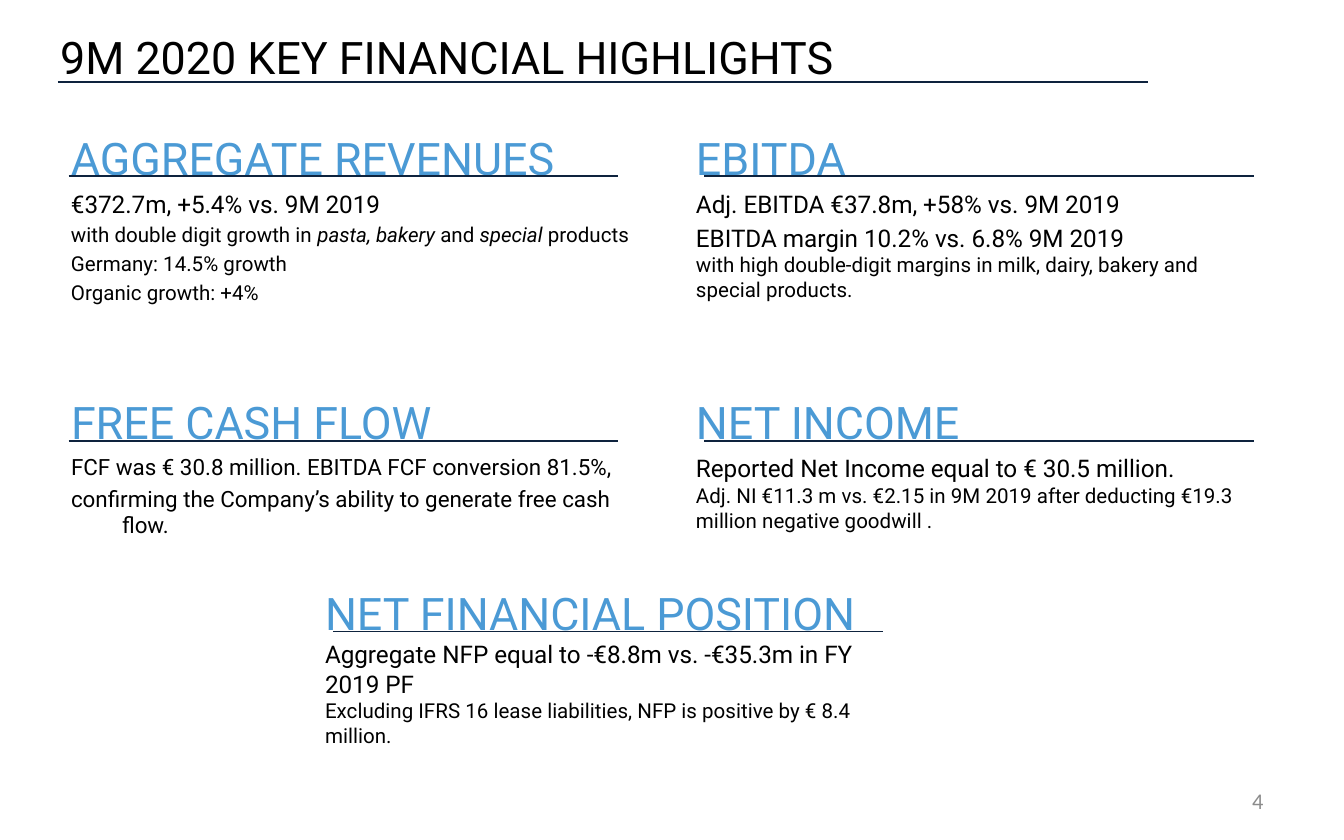
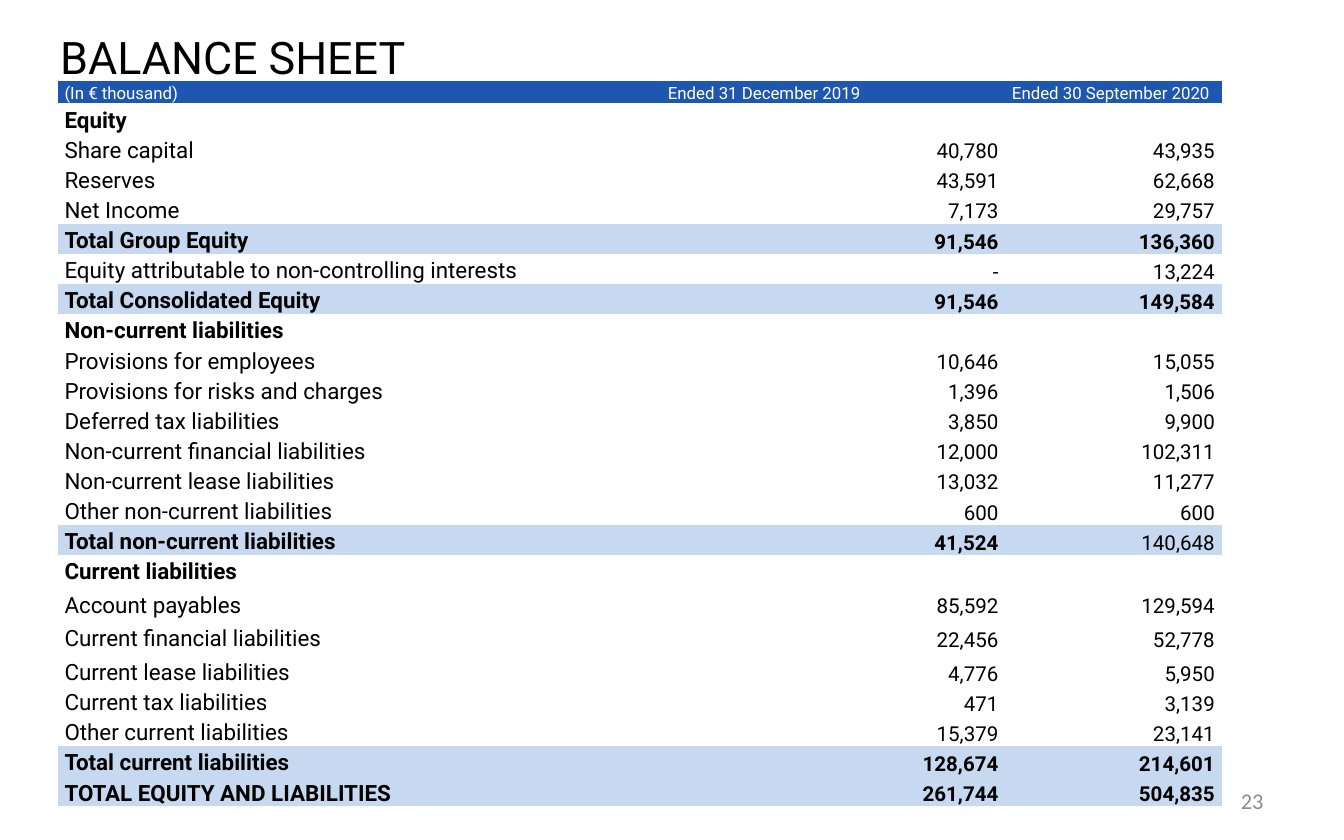
from lxml import etree
from pptx import Presentation
from pptx.dml.color import RGBColor
from pptx.enum.shapes import MSO_CONNECTOR
from pptx.enum.text import MSO_ANCHOR, PP_ALIGN
from pptx.oxml.ns import qn
from pptx.util import Inches, Pt

TOP, MIDDLE, BOTTOM = MSO_ANCHOR.TOP, MSO_ANCHOR.MIDDLE, MSO_ANCHOR.BOTTOM
LEFT, RIGHT = PP_ALIGN.LEFT, PP_ALIGN.RIGHT
STRAIGHT = MSO_CONNECTOR.STRAIGHT

BLACK = RGBColor(0x00, 0x00, 0x00)
WHITE = RGBColor(0xFF, 0xFF, 0xFF)
GREY = RGBColor(0x8C, 0x8C, 0x8C)
NAVY = RGBColor(0x0E, 0x23, 0x3E)
HEADING_BLUE = RGBColor(0x4B, 0x9A, 0xD5)
HEADER_BLUE = RGBColor(0x1F, 0x57, 0xAE)
TOTAL_BLUE = RGBColor(0xC6, 0xD9, 0xF0)

NO_STYLE = "{2D5ABB26-0587-4C30-8999-92F81FD0307C}"
HANG = Inches(0.38)

TITLE = dict(size=Pt(24), name="Roboto", color=BLACK)
HEADING = dict(TITLE, color=HEADING_BLUE)
LEAD = dict(TITLE, size=Pt(13))
BODY = dict(TITLE, size=Pt(12))
DETAIL = dict(TITLE, size=Pt(11))
PAGE = dict(size=Pt(12), name="Calibri", color=GREY)


def write(p, text, fmt):
    """Fill a paragraph; the parts between asterisks are italic."""
    for i, part in enumerate(text.split("*")):
        r = p.add_run()
        r.text = part
        for key, value in fmt.items():
            if key == "color":
                r.font.color.rgb = value
            else:
                setattr(r.font, key, value)
        if i % 2:
            r.font.italic = True


def add_rule(s, x, y, width):
    line = s.shapes.add_connector(STRAIGHT, Inches(x), Inches(y), Inches(x + width), Inches(y))
    line.line.color.rgb = NAVY
    line.line.width = Pt(0.75)
    etree.SubElement(line._element.spPr, qn("a:effectLst"))


prs = Presentation()
prs.slide_width, prs.slide_height = Inches(10), Inches(6.25)

# Title, title rule and page number
slides = []
for title, page in [("9M 2020 KEY FINANCIAL HIGHLIGHTS", "4"), ("BALANCE SHEET", "23")]:
    s = prs.slides.add_slide(prs.slide_layouts[6])
    slides.append(s)
    for box, text, fmt, align in [
        ((0.35, 0, 9, 0.84), title, TITLE, LEFT),
        ((7.17, 5.79, 2.33, 0.33), page, PAGE, RIGHT),
    ]:
        tf = s.shapes.add_textbox(*map(Inches, box)).text_frame
        tf.word_wrap = True
        tf.vertical_anchor = MIDDLE
        p = tf.paragraphs[0]
        p.alignment = align
        write(p, text, fmt)
    add_rule(s, 0.43, 0.61, 8.11)

# Highlights: box, rule start, heading, lines as (text, format, spaced and hanging)
highlights = [
    ((0.43, 0.92, 4.57, 1.73), (0.51, 1.31), "AGGREGATE REVENUES", [
        ("€372.7m, +5.4% vs. 9M 2019", LEAD, True),
        ("with double digit growth in* pasta, bakery *and* special *products", DETAIL, True),
        ("Germany: 14.5% growth", DETAIL, True),
        ("Organic growth: +4%", DETAIL, True),
    ]),
    ((5.08, 0.92, 4.25, 1.7), (5.24, 1.31), "EBITDA", [
        ("Adj. EBITDA €37.8m, +58% vs. 9M 2019", LEAD, True),
        ("EBITDA margin 10.2% vs. 6.8% 9M 2019", LEAD, True),
        ("with high double-digit margins in milk, dairy, bakery and special products.",
         DETAIL, False),
    ]),
    ((0.43, 2.89, 4.41, 1.35), (0.51, 3.28), "FREE CASH FLOW", [
        ("FCF was € 30.8 million. EBITDA FCF conversion 81.5%,", BODY, True),
        ("confirming the Company’s ability to generate free cash flow.", BODY, True),
    ]),
    ((5.08, 2.89, 4.25, 1.18), (5.24, 3.28), "NET INCOME", [
        ("Reported Net Income equal to € 30.5 million.", LEAD, True),
        ("Adj. NI €11.3 m vs. €2.15 in 9M 2019 after deducting €19.3 million negative goodwill .",
         DETAIL, False),
    ]),
    ((2.32, 4.31, 4.41, 1.63), (2.48, 4.7), "NET FINANCIAL POSITION", [
        ("Aggregate NFP equal to -€8.8m vs. -€35.3m in FY 2019 PF", LEAD, False),
        ("Excluding IFRS 16 lease liabilities, NFP is positive by € 8.4 million.",
         DETAIL, False),
    ]),
]
s = slides[0]
for box, rule, heading, lines in highlights:
    tf = s.shapes.add_textbox(*map(Inches, box)).text_frame
    tf.word_wrap = True
    tf.vertical_anchor = TOP
    write(tf.paragraphs[0], heading, HEADING)
    for text, fmt, spaced in lines:
        p = tf.add_paragraph()
        if spaced:
            pPr = p._p.get_or_add_pPr()
            pPr.set("marL", str(HANG))
            pPr.set("indent", str(-HANG))
            before = etree.SubElement(pPr, qn("a:spcBef"))
            etree.SubElement(before, qn("a:spcPct"), val="20000")
        write(p, text, fmt)
    add_rule(s, *rule, 4.09)

# Balance sheet
balance = [
    ("(In € thousand)", "Ended 31 December 2019", "Ended 30 September 2020"),
    ("Equity", "", ""),
    ("Share capital", "40,780", "43,935"),
    ("Reserves", "43,591", "62,668"),
    ("Net Income", "7,173", "29,757"),
    ("Total Group Equity", "91,546", "136,360"),
    ("Equity attributable to non-controlling interests", "-", "13,224"),
    ("Total Consolidated Equity", "91,546", "149,584"),
    ("Non-current liabilities", "", ""),
    ("Provisions for employees", "10,646", "15,055"),
    ("Provisions for risks and charges", "1,396", "1,506"),
    ("Deferred tax liabilities", "3,850", "9,900"),
    ("Non-current financial liabilities", "12,000", "102,311"),
    ("Non-current lease liabilities", "13,032", "11,277"),
    ("Other non-current liabilities", "600", "600"),
    ("Total non-current liabilities", "41,524", "140,648"),
    ("Current liabilities", "", ""),
    ("Account payables", "85,592", "129,594"),
    ("Current financial liabilities", "22,456", "52,778"),
    ("Current lease liabilities", "4,776", "5,950"),
    ("Current tax liabilities", "471", "3,139"),
    ("Other current liabilities", "15,379", "23,141"),
    ("Total current liabilities", "128,674", "214,601"),
    ("TOTAL EQUITY AND LIABILITIES", "261,744", "504,835"),
]
TALL_ROWS = (17, 18, 19)
NOT_BOLD = "140,648"

table = slides[1].shapes.add_table(
    len(balance), 3, Inches(0.43), Inches(0.6), Inches(8.66), Inches(5.4)).table
table.first_row = table.horz_banding = False
table._tbl.tblPr.find(qn("a:tableStyleId")).text = NO_STYLE
for column, width in zip(table.columns, (4.49, 2.56, 1.61)):
    column.width = Inches(width)

for i, values in enumerate(balance):
    header = i == 0
    total = values[0].upper().startswith("TOTAL")
    section = not values[1]
    table.rows[i].height = Inches(0.17 if header else 0.25 if i in TALL_ROWS else 0.22)
    for j, value in enumerate(values):
        cell = table.cell(i, j)
        cell.margin_left = cell.margin_right = Inches(0.05)
        cell.margin_top = cell.margin_bottom = 0
        cell.vertical_anchor = BOTTOM
        cell.fill.solid()
        cell.fill.fore_color.rgb = HEADER_BLUE if header else TOTAL_BLUE if total else WHITE
        p = cell.text_frame.paragraphs[0]
        p.line_spacing = 1.12
        p.alignment = RIGHT if j and not header else LEFT
        if header:
            write(p, value, dict(BODY, size=Pt(9), color=WHITE))
        elif value:
            bold = (total or section) and value != NOT_BOLD
            write(p, value, dict(DETAIL if j else BODY, bold=bold))
        else:
            etree.SubElement(p._p, qn("a:endParaRPr"), sz="1100")

prs.save("out.pptx")
